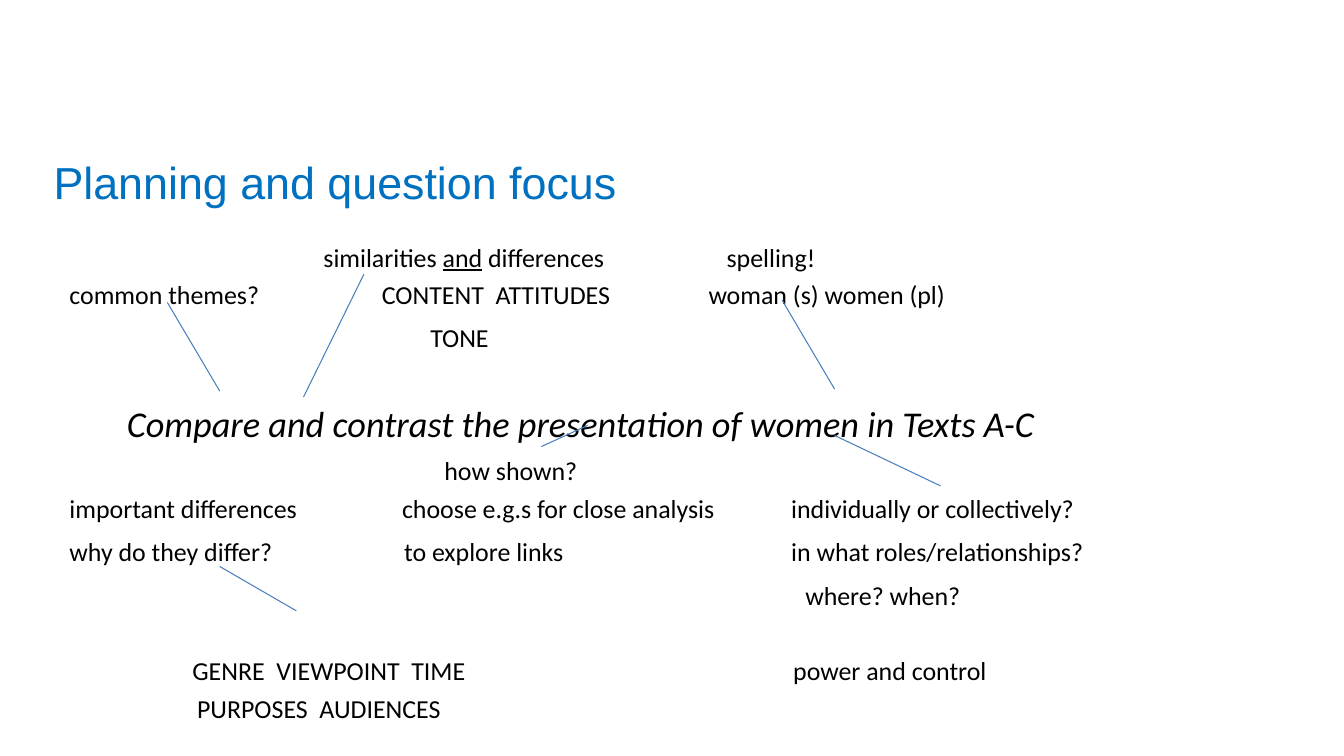
from dataclasses import dataclass

from pptx import Presentation
from pptx.dml.color import RGBColor as Rgb
from pptx.enum.shapes import MSO_CONNECTOR as Connector
from pptx.enum.text import MSO_ANCHOR as Anchor, MSO_AUTO_SIZE as AutoSize, PP_ALIGN as Align
from pptx.oxml.ns import qn
from pptx.util import Inches, Pt
from lxml.etree import SubElement

WIDTH, HEIGHT = Inches(13.33), Inches(7.5)


@dataclass(frozen=True)
class Theme:
    heading: Rgb = Rgb(0x00, 0x70, 0xC0)
    ink: Rgb = Rgb(0x00, 0x00, 0x00)
    link: Rgb = Rgb(0x4B, 0x7E, 0xBC)
    heading_font: str = "Arial"
    note_font: str = "Calibri"
    heading_size: Pt = Pt(32)
    question_size: Pt = Pt(25.9)
    note_size: Pt = Pt(18.5)
    line_height: Pt = Pt(16)
    link_width: Pt = Pt(0.75)


THEME = Theme()
HEADING = {"name": THEME.heading_font, "size": THEME.heading_size, "bold": False}
NOTE = {"name": THEME.note_font, "size": THEME.note_size}
QUESTION = {**NOTE, "size": THEME.question_size, "italic": True}
UNDERLINED = {**NOTE, "underline": True}

NOTE_ROWS = [
    (0, [18.9, 48.9], [("\tsimilarities ", NOTE), ("and", UNDERLINED),
                       (" differences\tspelling!", NOTE)]),
    (10.4, [23.25, 47.55],
     [("common themes?\tCONTENT  ATTITUDES\twoman (s) women (pl)", NOTE)]),
    (14.9, [26.85], [("\tTONE", NOTE)]),
    (49.5, [4.28],
     [("\tCompare and contrast the presentation of women in Texts A-C", QUESTION)]),
    (13.5, [27.9], [("\thow shown?", NOTE)]),
    (11.1, [24.75, 53.7],
     [("important differences\tchoose e.g.s for close analysis\tindividually or collectively?", NOTE)]),
    (14.9, [24.9, 53.7],
     [("why do they differ?\tto explore links\tin what roles/relationships?", NOTE)]),
    (15.2, [54.75], [("\twhere? when?", NOTE)]),
    (37.6, [9.15, 53.85], [("\tGENRE  VIEWPOINT  TIME\tpower and control", NOTE)]),
    (11.1, [9.5], [("\tPURPOSES  AUDIENCES", NOTE)]),
]

LINKS = [
    ((12.45, 40), (16.35, 51.73)),
    ((27.08, 36.27), (22.58, 52.53)),
    ((16.35, 74.93), (22.05, 80.8)),
    ((62.1, 57.6), (69.98, 64.27)),
    ((43.73, 56.27), (40.28, 59.07)),
    ((58.2, 39.73), (62.1, 51.47)),
]


def across(percent):
    return round(WIDTH * percent / 100)


def down(percent):
    return round(HEIGHT * percent / 100)


def apply(target, values):
    for name, value in values.items():
        setattr(target, name, value)


def area(left, top, width, height):
    return across(left), down(top), across(width), down(height)


def add_run(paragraph, text, font_format, color):
    run = paragraph.add_run()
    run.text = text
    apply(run.font, font_format)
    run.font.color.rgb = color


def set_tabs(paragraph, stops):
    tabs = SubElement(paragraph._p.get_or_add_pPr(), qn("a:tabLst"))
    for stop in stops:
        SubElement(tabs, qn("a:tab"), pos=str(across(stop)), algn="l")


def write_heading(title):
    apply(title, dict(zip(("left", "top", "width", "height"),
                          area(3.23, 19.5, 92.12, 9.07))))
    apply(title.text_frame, {"word_wrap": True, "auto_size": AutoSize.NONE,
                             "vertical_anchor": Anchor.MIDDLE})
    paragraph = title.text_frame.paragraphs[0]
    paragraph.alignment = Align.LEFT
    add_run(paragraph, "Planning and question focus", HEADING, THEME.heading)


def add_notes(slide):
    frame = slide.shapes.add_textbox(*area(4.43, 23.87, 92.05, 72.53)).text_frame
    apply(frame, {"word_wrap": True, "auto_size": AutoSize.NONE,
                  "vertical_anchor": Anchor.TOP, "margin_top": down(9.2)})
    for index, (gap, stops, pieces) in enumerate(NOTE_ROWS):
        paragraph = frame.add_paragraph() if index else frame.paragraphs[0]
        set_tabs(paragraph, stops)
        apply(paragraph, {"alignment": Align.LEFT, "space_before": Pt(gap),
                          "space_after": Pt(0), "line_spacing": THEME.line_height})
        for text, font_format in pieces:
            add_run(paragraph, text, font_format, THEME.ink)


def add_link(slide, start, end):
    link = slide.shapes.add_connector(
        Connector.STRAIGHT, across(start[0]), down(start[1]), across(end[0]), down(end[1]))
    link.line.color.rgb = THEME.link
    link.line.width = THEME.link_width
    SubElement(link._element.spPr, qn("a:effectLst"))


def main():
    deck = Presentation()
    apply(deck, {"slide_width": WIDTH, "slide_height": HEIGHT})
    slide = deck.slides.add_slide(deck.slide_layouts[5])
    write_heading(slide.shapes.title)
    add_notes(slide)
    for start, end in LINKS:
        add_link(slide, start, end)
    deck.save("out.pptx")


if __name__ == "__main__":
    main()
